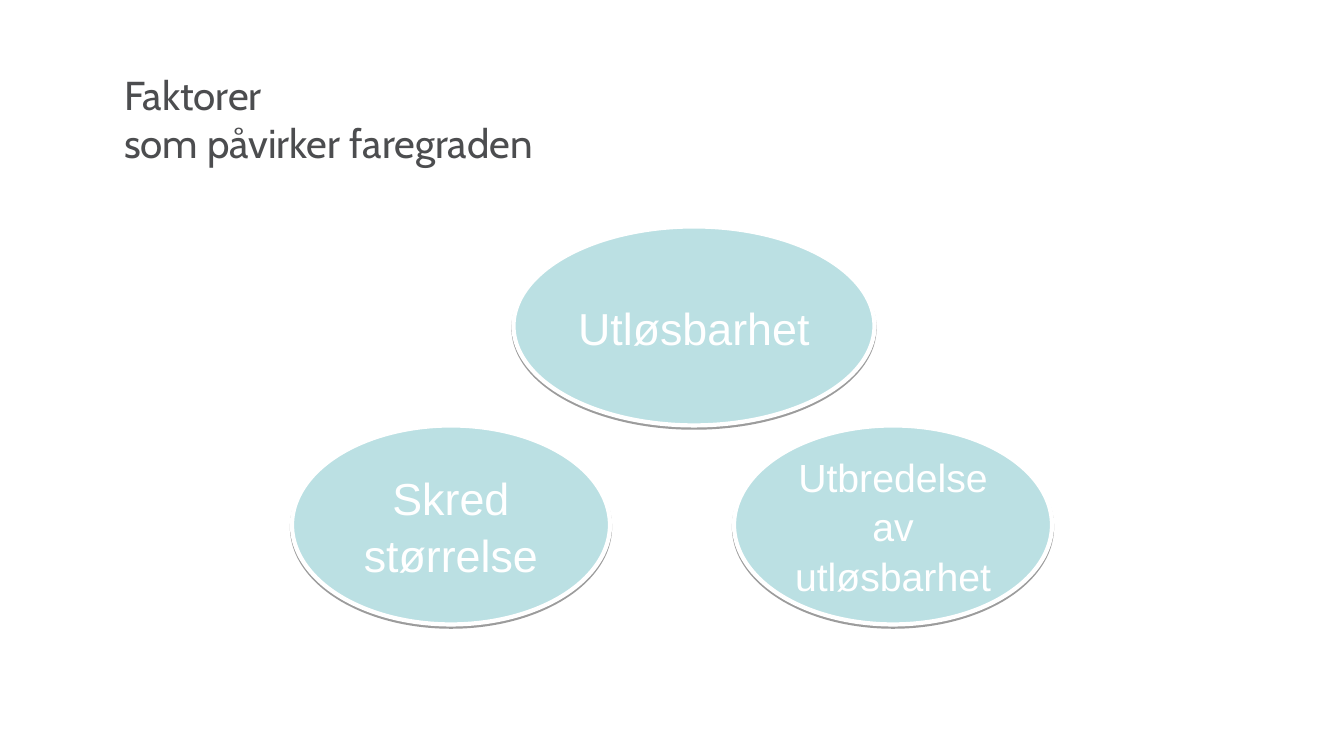
from lxml.etree import SubElement
from pptx import Presentation
from pptx.dml.color import RGBColor
from pptx.enum.shapes import MSO_SHAPE as Shape
from pptx.enum.text import MSO_ANCHOR as Anchor, PP_ALIGN as Align
from pptx.oxml.ns import qn
from pptx.util import Pt

HEADING = "Faktorer\vsom påvirker faregraden"
FACTORS = [
    {"lines": ["Skred", "størrelse"], "center": (451, 525), "width": 318, "size": 32},
    {"lines": ["Utløsbarhet"], "center": (694, 326), "width": 361, "size": 32},
    {"lines": ["Utbredelse av utløsbarhet"], "center": (893, 525), "width": 318, "size": 28},
]
FACTOR_HEIGHT = 199

GREY = RGBColor(0x4C, 0x4D, 0x4F)
PALE_TEAL = RGBColor(0xBB, 0xE0, 0xE3)
WHITE = RGBColor(0xFF, 0xFF, 0xFF)

HEADING_FONT = {"name": "Cabin", "size": Pt(28.8), "bold": False}
FACTOR_FONT = {"name": "Arial", "bold": False}


def px(length):
    return round(length * 914400 / 100.8)


def assign(target, values):
    for key, value in values.items():
        setattr(target, key, value)


def style_font(font, values, color):
    assign(font, values)
    font.color.rgb = color


def add_shadow(oval):
    oval.shadow.inherit = False
    effects = oval._element.spPr.find(qn("a:effectLst"))
    shadow = SubElement(effects, qn("a:outerShdw"), blurRad="0", dist=str(Pt(1.6)),
                        dir="5400000", rotWithShape="0")
    black = SubElement(shadow, qn("a:srgbClr"), val="000000")
    SubElement(black, qn("a:alpha"), val="38000")


def add_heading(slide):
    heading = slide.shapes.title
    assign(heading, {"left": px(114), "top": px(65), "width": px(1136), "height": px(91)})
    frame = heading.text_frame
    frame.text = HEADING
    assign(frame, {"word_wrap": True, "vertical_anchor": Anchor.TOP})
    paragraph = frame.paragraphs[0]
    assign(paragraph, {"alignment": Align.LEFT, "line_spacing": 1.0})
    for run in paragraph.runs:
        style_font(run.font, HEADING_FONT, GREY)


def add_factor(slide, factor):
    x, y = factor["center"]
    width = factor["width"]
    oval = slide.shapes.add_shape(Shape.OVAL, px(x - width / 2), px(y - FACTOR_HEIGHT / 2),
                                  px(width), px(FACTOR_HEIGHT))
    oval.fill.solid()
    oval.fill.fore_color.rgb = PALE_TEAL
    oval.line.color.rgb = WHITE
    oval.line.width = Pt(3)
    add_shadow(oval)
    frame = oval.text_frame
    frame.text = "\n".join(factor["lines"])
    assign(frame, {"word_wrap": True, "vertical_anchor": Anchor.MIDDLE,
                   "margin_left": px(4), "margin_right": px(4),
                   "margin_top": px(4), "margin_bottom": px(4)})
    for paragraph in frame.paragraphs:
        assign(paragraph, {"alignment": Align.CENTER, "line_spacing": 1.05})
        style_font(paragraph.runs[0].font, FACTOR_FONT | {"size": Pt(factor["size"])}, WHITE)


def main():
    deck = Presentation()
    assign(deck, {"slide_width": px(1344), "slide_height": px(756)})
    slide = deck.slides.add_slide(deck.slide_layouts[5])
    add_heading(slide)
    for factor in FACTORS:
        add_factor(slide, factor)
    deck.save("out.pptx")


if __name__ == "__main__":
    main()
